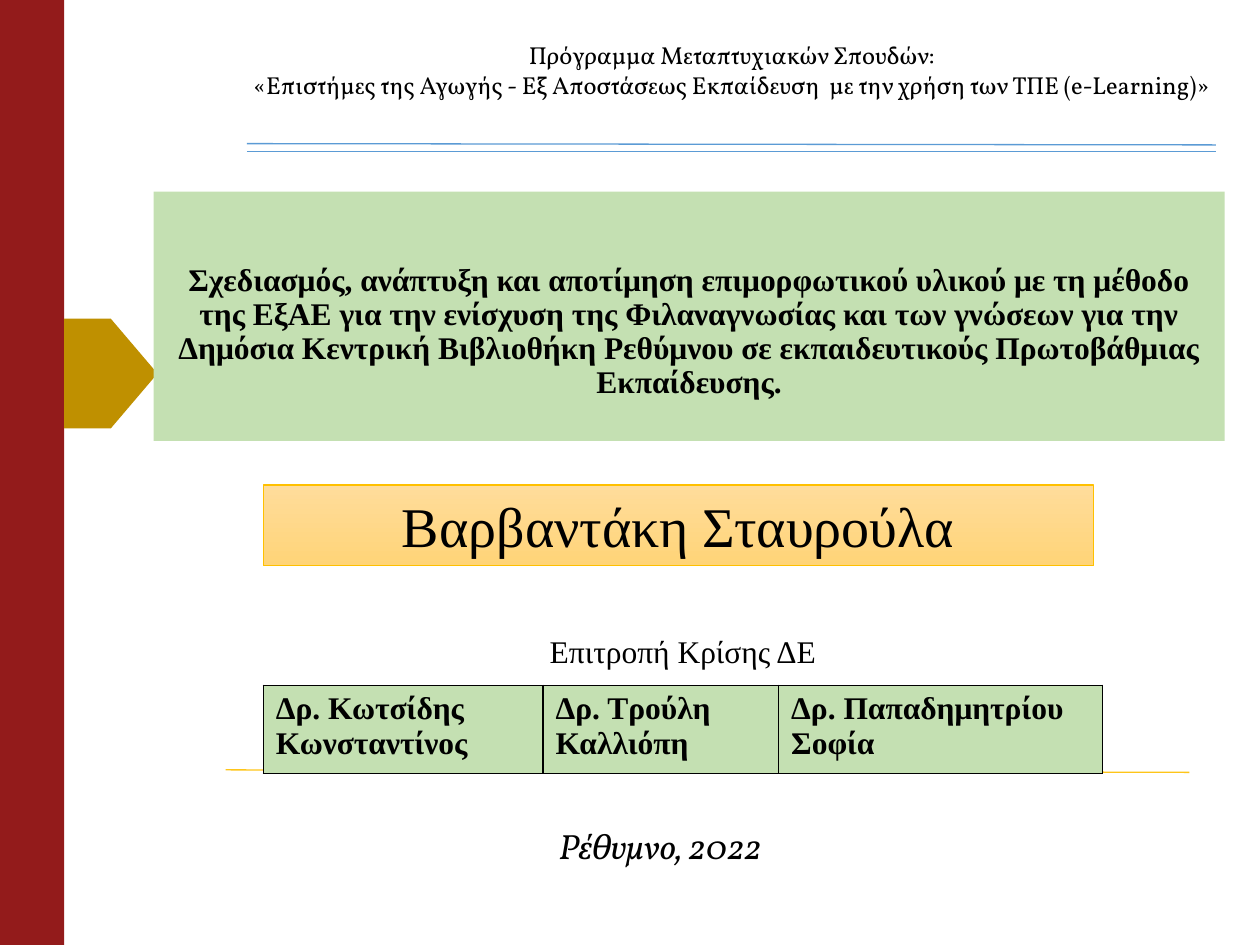
import pptx
import pptx.util
import pptx.dml.color
import pptx.enum.shapes
import pptx.enum.text
import pptx.oxml
import pptx.oxml.ns
from pptx.util import Inches

SHAPE = pptx.enum.shapes.MSO_SHAPE
ANCHOR = pptx.enum.text.MSO_ANCHOR
ALIGN = pptx.enum.text.PP_ALIGN
SERIF = "Times New Roman"
GREEN = "C4E0B2"
BLUE = "5B9BD5"


def rgb(value):
    return pptx.dml.color.RGBColor.from_string(value)


def write(tf, text, size, font=SERIF, bold=False, italic=False, align=ALIGN.CENTER):
    tf.word_wrap = True
    tf.text = text
    for p in tf.paragraphs:
        p.alignment = align
        for r in p.runs:
            r.font.name = font
            r.font.size = pptx.util.Pt(size)
            r.font.bold = bold
            r.font.italic = italic
            r.font.color.rgb = rgb("000000")


def add_box(s, kind, box, fill):
    sp = s.shapes.add_shape(kind, *map(Inches, box))
    sp.shadow.inherit = False
    sp.fill.solid()
    sp.fill.fore_color.rgb = rgb(fill)
    sp.line.fill.background()
    return sp


def add_text(s, box, text, size, anchor=ANCHOR.TOP, **style):
    sp = s.shapes.add_textbox(*map(Inches, box))
    sp.text_frame.vertical_anchor = anchor
    write(sp.text_frame, text, size, **style)


def add_rule(s, x1, y1, x2, y2, color):
    line = s.shapes.add_connector(
        pptx.enum.shapes.MSO_CONNECTOR.STRAIGHT, *map(Inches, (x1, y1, x2, y2)))
    line.line.color.rgb = rgb(color)
    line.line.width = pptx.util.Pt(0.75)
    pptx.oxml.ns.qn("a:effectLst")
    line._element.spPr.append(pptx.oxml.parse_xml(
        f'<a:effectLst {pptx.oxml.ns.nsdecls("a")}/>'))


def add_title(s, text):
    sp = add_box(s, SHAPE.RECTANGLE, (1.22, 1.52, 8.5, 1.98), GREEN)
    tf = sp.text_frame
    tf.vertical_anchor = ANCHOR.BOTTOM
    tf.margin_bottom = Inches(0.32)
    write(tf, text, 18, bold=True)
    tf.paragraphs[0].line_spacing = 0.9


def add_author(s, name):
    sp = add_box(s, SHAPE.RECTANGLE, (2.09, 3.85, 6.59, 0.64), "FFD68D")
    sp.fill.gradient()
    sp.fill.gradient_angle = 270
    for stop, color in zip(sp.fill.gradient_stops, ("FFDC9B", "FFD478")):
        stop.color.rgb = rgb(color)
    sp.line.color.rgb = rgb("FFC000")
    sp.line.width = pptx.util.Pt(0.75)
    sp.text_frame.vertical_anchor = ANCHOR.TOP
    write(sp.text_frame, name, 32)


def add_cell_borders(cell):
    tc_pr = cell._tc.get_or_add_tcPr()
    for i, side in enumerate(("lnL", "lnR", "lnT", "lnB")):
        tc_pr.insert(i, pptx.oxml.parse_xml(
            f'<a:{side} {pptx.oxml.ns.nsdecls("a")} w="12700"><a:solidFill>'
            f'<a:srgbClr val="000000"/></a:solidFill></a:{side}>'))


def add_committee(s, members):
    widths = (2.22, 1.87, 2.57)
    table = s.shapes.add_table(
        1, len(members), Inches(2.09), Inches(5.44), Inches(sum(widths)), Inches(0.7)).table
    for column, width, cell, member in zip(table.columns, widths, table.rows[0].cells, members):
        column.width = Inches(width)
        cell.fill.solid()
        cell.fill.fore_color.rgb = rgb(GREEN)
        write(cell.text_frame, member, 18, bold=True, align=ALIGN.LEFT)
        add_cell_borders(cell)


def main():
    prs = pptx.Presentation()
    prs.slide_width, prs.slide_height = Inches(10), Inches(7.5)
    s = prs.slides.add_slide(prs.slide_layouts[6])

    add_box(s, SHAPE.RECTANGLE, (0, 0, 0.51, 7.5), "931B1B")
    add_box(s, SHAPE.PENTAGON, (0.51, 2.53, 0.74, 0.87), "BF9000")
    add_title(s, "Σχεδιασμός, ανάπτυξη και αποτίμηση επιμορφωτικού υλικού με τη μέθοδο "
                 "της ΕξΑΕ για την ενίσχυση της Φιλαναγνωσίας και των γνώσεων για την "
                 "Δημόσια Κεντρική Βιβλιοθήκη Ρεθύμνου σε εκπαιδευτικούς Πρωτοβάθμιας "
                 "Εκπαίδευσης.")
    add_text(s, (1.76, 0.27, 8.1, 0.57),
             "Πρόγραμμα Μεταπτυχιακών Σπουδών:\n«Επιστήμες της Αγωγής - Εξ Αποστάσεως "
             "Εκπαίδευση  με την χρήση των ΤΠΕ (e-Learning)»", 14, font="Vollkorn")
    add_text(s, (1.3, 6.49, 7.88, 0.44), "Ρέθυμνο, 2022", 20,
             anchor=ANCHOR.MIDDLE, font="Vollkorn", italic=True)
    add_rule(s, 1.96, 1.14, 9.65, 1.15, BLUE)
    add_rule(s, 1.96, 1.2, 9.65, 1.2, BLUE)
    add_rule(s, 1.79, 6.11, 9.44, 6.13, "FEC519")
    add_author(s, "Βαρβαντάκη Σταυρούλα")
    add_committee(s, ("Δρ. Κωτσίδης Κωνσταντίνος", "Δρ. Τρούλη Καλλιόπη",
                      "Δρ. Παπαδημητρίου Σοφία"))
    add_text(s, (1.68, 4.97, 7.48, 0.4), "Επιτροπή Κρίσης ΔΕ", 18)
    prs.save("out.pptx")


if __name__ == "__main__":
    main()
